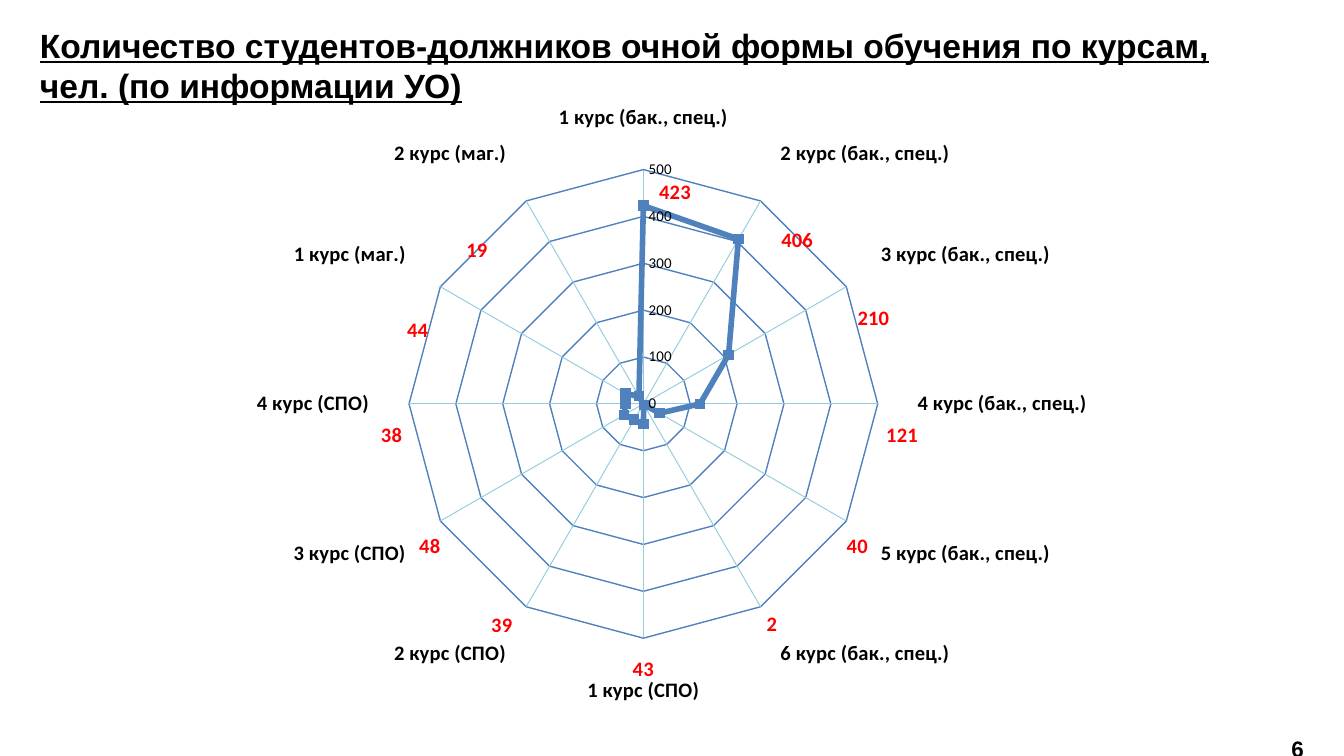
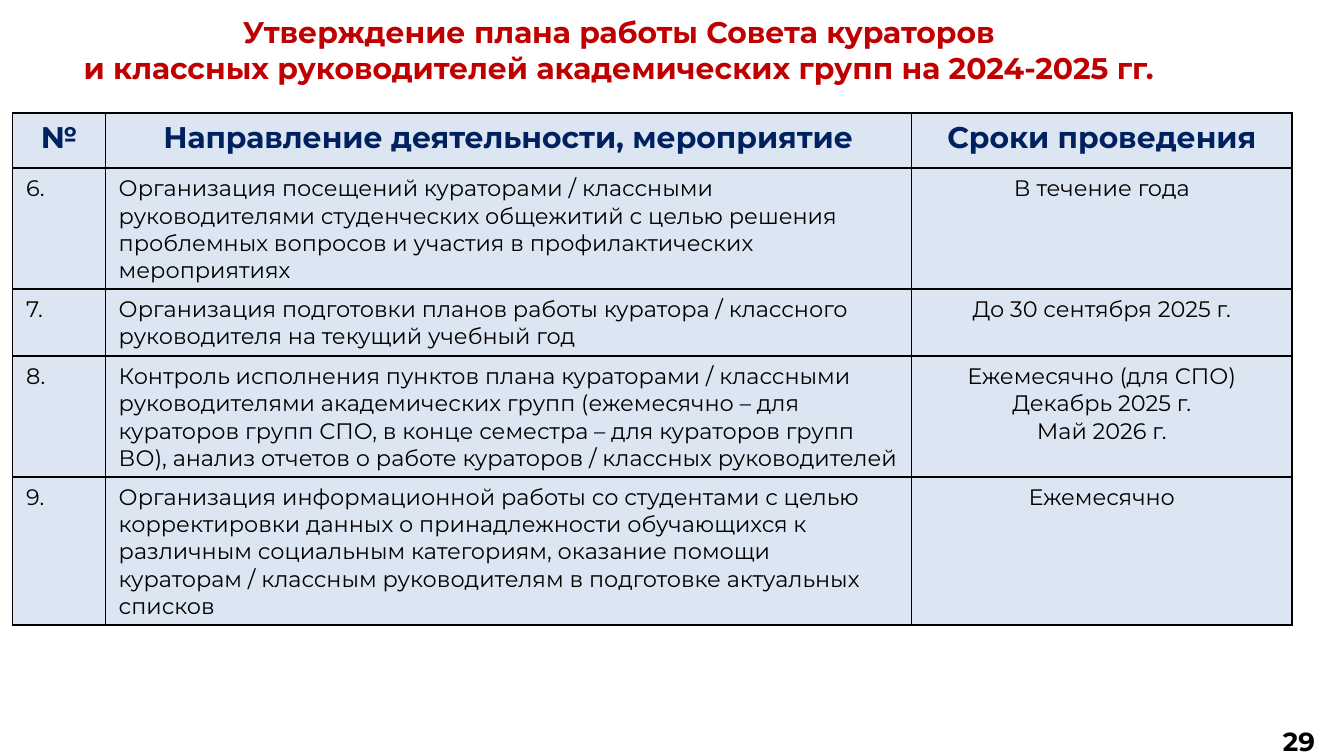
from lxml import etree
from pptx import Presentation
from pptx.chart.data import CategoryChartData
from pptx.dml.color import RGBColor
from pptx.enum.chart import XL_CHART_TYPE as ChartType
from pptx.enum.chart import XL_MARKER_STYLE as Marker
from pptx.enum.chart import XL_TICK_MARK as Tick
from pptx.enum.text import MSO_ANCHOR as Anchor
from pptx.enum.text import MSO_AUTO_SIZE as AutoSize
from pptx.enum.text import PP_ALIGN as Align
from pptx.oxml import parse_xml
from pptx.oxml.ns import nsdecls, qn
from pptx.util import Cm, Pt

COLORS = {
    "black": "000000",
    "red": "FF0000",
    "dark_red": "C00000",
    "navy": "002060",
    "cell": "DCE6F2",
    "series": "4F81BD",
    "spoke": "93CDDD",
}
TITLE_ONLY = 5
C15 = "http://schemas.microsoft.com/office/drawing/2012/chart"

# Students in debt, with the label's shift (cm) from its usual place
DEBTORS = [
    ("1 курс (бак., спец.)", 423, (0.6, 0.19)),
    ("2 курс (бак., спец.)", 406, (0.76, 0.35)),
    ("3 курс (бак., спец.)", 210, (2.35, -0.4)),
    ("4 курс (бак., спец.)", 121, (3.32, 0.6)),
    ("5 курс (бак., спец.)", 40, (3.45, 2.23)),
    ("6 курс (бак., спец.)", 2, (2.27, 3.84)),
    ("1 курс (СПО)", 43, (0, 4.2)),
    ("2 курс (СПО)", 39, (-2.25, 3.56)),
    ("3 курс (СПО)", 48, (-3.38, 2.19)),
    ("4 курс (СПО)", 38, (-4.02, 0.6)),
    ("1 курс (маг.)", 44, (-3.64, -0.91)),
    ("2 курс (маг.)", 19, (-2.81, -2.43)),
]

PLAN_HEADER = ("№", "Направление деятельности, мероприятие", "Сроки проведения")
PLAN = [
    ("6.",
     "Организация посещений кураторами / классными руководителями студенческих "
     "общежитий с целью решения проблемных вопросов и участия в "
     "профилактических мероприятиях",
     "В течение года"),
    ("7.",
     "Организация подготовки планов работы куратора / классного руководителя "
     "на текущий учебный год",
     "До 30 сентября 2025 г."),
    ("8.",
     "Контроль исполнения пунктов плана кураторами / классными руководителями "
     "академических групп (ежемесячно – для кураторов групп СПО, в конце "
     "семестра – для кураторов групп ВО), анализ отчетов о работе кураторов / "
     "классных руководителей",
     "Ежемесячно (для СПО)\nДекабрь 2025 г.\nМай 2026 г."),
    ("9.",
     "Организация информационной работы со студентами с целью корректировки "
     "данных о принадлежности обучающихся к различным социальным категориям, "
     "оказание помощи кураторам / классным руководителям в подготовке "
     "актуальных списков",
     "Ежемесячно"),
]


def rgb(name):
    return RGBColor.from_string(COLORS[name])


def style_font(font, face, size, color="black", bold=False, underline=None):
    font.name, font.size, font.bold = face, Pt(size), bold
    font.underline = underline
    font.color.rgb = rgb(color)


def write(frame, text, align=Align.LEFT, spacing=None, **font_format):
    """Fill a text frame, one paragraph for each line of text."""
    frame.word_wrap = True
    frame.text = text
    for paragraph in frame.paragraphs:
        paragraph.alignment = align
        paragraph.line_spacing = spacing
        for run in paragraph.runs:
            style_font(run.font, **font_format)


def style_line(line, color, width):
    line.color.rgb = rgb(color)
    line.width = Pt(width)


def add_borders(cell, color="black", width=1):
    properties = cell._tc.get_or_add_tcPr()
    for position, side in enumerate(("lnL", "lnR", "lnT", "lnB")):
        properties.insert(position, parse_xml(
            f'<a:{side} {nsdecls("a")} w="{Pt(width)}"><a:solidFill>'
            f'<a:srgbClr val="{COLORS[color]}"/></a:solidFill></a:{side}>'))


def shift_label(label, x, y):
    """Move a chart label by fractions of the chart's width and height."""
    layout = etree.Element(qn("c:layout"))
    manual = etree.SubElement(layout, qn("c:manualLayout"))
    for tag, value in (("c:x", x), ("c:y", y)):
        etree.SubElement(manual, qn(tag)).set("val", f"{value:.4f}")
    label.find(qn("c:idx")).addnext(layout)


def hide_leader_lines(labels):
    """Switch off leader lines, both in the base format and in its extension."""
    for old in labels.findall(qn("c:showLeaderLines")):
        labels.remove(old)
    etree.SubElement(labels, qn("c:showLeaderLines")).set("val", "0")
    labels.append(parse_xml(
        f'<c:extLst {nsdecls("c")}><c:ext uri="{{CE6537A1-D6FC-4f65-9D91-7224C49458BB}}"'
        f' xmlns:c15="{C15}"><c15:showLeaderLines val="0"/></c:ext></c:extLst>'))


class Deck:
    def __init__(self):
        self.show = Presentation()
        self.show.slide_width, self.show.slide_height = Cm(25.4), Cm(14.29)
        self.slide = None
        self.face = None

    def new_slide(self, face):
        self.slide = self.show.slides.add_slide(self.show.slide_layouts[TITLE_ONLY])
        self.face = face

    def title(self, text, left, top, width, height, **text_format):
        title = self.slide.shapes.title
        title.left, title.top = Cm(left), Cm(top)
        title.width, title.height = Cm(width), Cm(height)
        frame = title.text_frame
        frame.vertical_anchor = Anchor.TOP
        frame.auto_size = AutoSize.NONE
        write(frame, text, face=self.face, bold=True, **text_format)

    def page_number(self, number, top, width, height, **text_format):
        box = self.slide.shapes.add_textbox(Cm(23.7), Cm(top), Cm(width), Cm(height))
        write(box.text_frame, str(number), align=Align.CENTER, face=self.face,
              bold=True, **text_format)

    def radar(self, rows, left, top, width, height, face="Calibri"):
        data = CategoryChartData()
        data.categories = [course for course, _, _ in rows]
        data.add_series("Series 1", [count for _, count, _ in rows])
        chart = self.slide.shapes.add_chart(
            ChartType.RADAR_MARKERS, Cm(left), Cm(top), Cm(width), Cm(height), data).chart
        chart.has_title = chart.has_legend = False
        style_font(chart.font, face, 10)

        courses, counts = chart.category_axis, chart.value_axis
        style_font(courses.tick_labels.font, face, 11, bold=True)
        courses.has_major_gridlines = counts.has_major_gridlines = True
        style_line(courses.major_gridlines.format.line, "spoke", 0.5)
        style_font(counts.tick_labels.font, face, 8)
        counts.minimum_scale, counts.maximum_scale, counts.major_unit = 0, 500, 100
        counts.major_tick_mark = counts.minor_tick_mark = Tick.NONE
        style_line(counts.format.line, "spoke", 0.5)
        style_line(counts.major_gridlines.format.line, "series", 0.75)

        chart.plots[0].vary_by_categories = False
        debtors = chart.plots[0].series[0]
        debtors.smooth = False
        style_line(debtors.format.line, "series", 3)
        debtors.marker.style, debtors.marker.size = Marker.SQUARE, 5
        debtors.marker.format.fill.solid()
        debtors.marker.format.fill.fore_color.rgb = rgb("series")
        style_line(debtors.marker.format.line, "series", 0.75)
        debtors.data_labels.show_value = True
        style_font(debtors.data_labels.font, face, 11, "red", bold=True)
        for index in range(len(rows)):
            style_font(debtors.points[index].data_label.font, face, 11, "red", bold=True)
        labels = list(chart.element.iter(qn("c:dLbl")))
        for label, (_, _, (x, y)) in zip(labels, rows):
            shift_label(label, x / width, y / height)
        hide_leader_lines(labels[0].getparent())

    def table(self, header, rows, left, top, widths, heights):
        table = self.slide.shapes.add_table(
            len(rows) + 1, len(header), Cm(left), Cm(top),
            Cm(sum(widths)), Cm(sum(heights))).table
        table.first_row = table.horz_banding = False
        for column, width in zip(table.columns, widths):
            column.width = Cm(width)
        for row, height in zip(table.rows, heights):
            row.height = Cm(height)
        for row, texts in enumerate([header, *rows]):
            if row == 0:
                look = {"size": 16, "color": "navy", "bold": True}
            else:
                look = {"size": 12}
            for column, text in enumerate(texts):
                cell = table.cell(row, column)
                cell.margin_bottom = Cm(0.09)
                cell.fill.solid()
                cell.fill.fore_color.rgb = rgb("cell")
                add_borders(cell)
                centred = row == 0 or column == len(header) - 1
                write(cell.text_frame, text, face=self.face,
                      align=Align.CENTER if centred else Align.LEFT, **look)


def main():
    deck = Deck()

    deck.new_slide("Arial")
    deck.radar(DEBTORS, 2.3, 1.74, 20.8, 11.79)
    deck.title("Количество студентов-должников очной формы обучения по курсам, "
               "чел. (по информации УО)", 0.5, 0.34, 22.75, 1.8,
               size=18, underline=True)
    deck.page_number(6, 13.51, 1.65, 0.94, size=12, spacing=1.5)

    deck.new_slide("Montserrat")
    deck.title("Утверждение плана работы Совета кураторов\n"
               "и классных руководителей академических групп на 2024-2025 гг.",
               0.3, 0.13, 22.8, 1.63, size=16, color="dark_red", align=Align.CENTER)
    deck.table(PLAN_HEADER, PLAN, 0.24, 2.14, widths=(1.75, 15.24, 7.19),
               heights=(1.04, 2.28, 1.26, 2.28, 2.8))
    deck.page_number(29, 13.59, 1.7, 0.74, size=14)

    deck.show.save("out.pptx")


if __name__ == "__main__":
    main()
